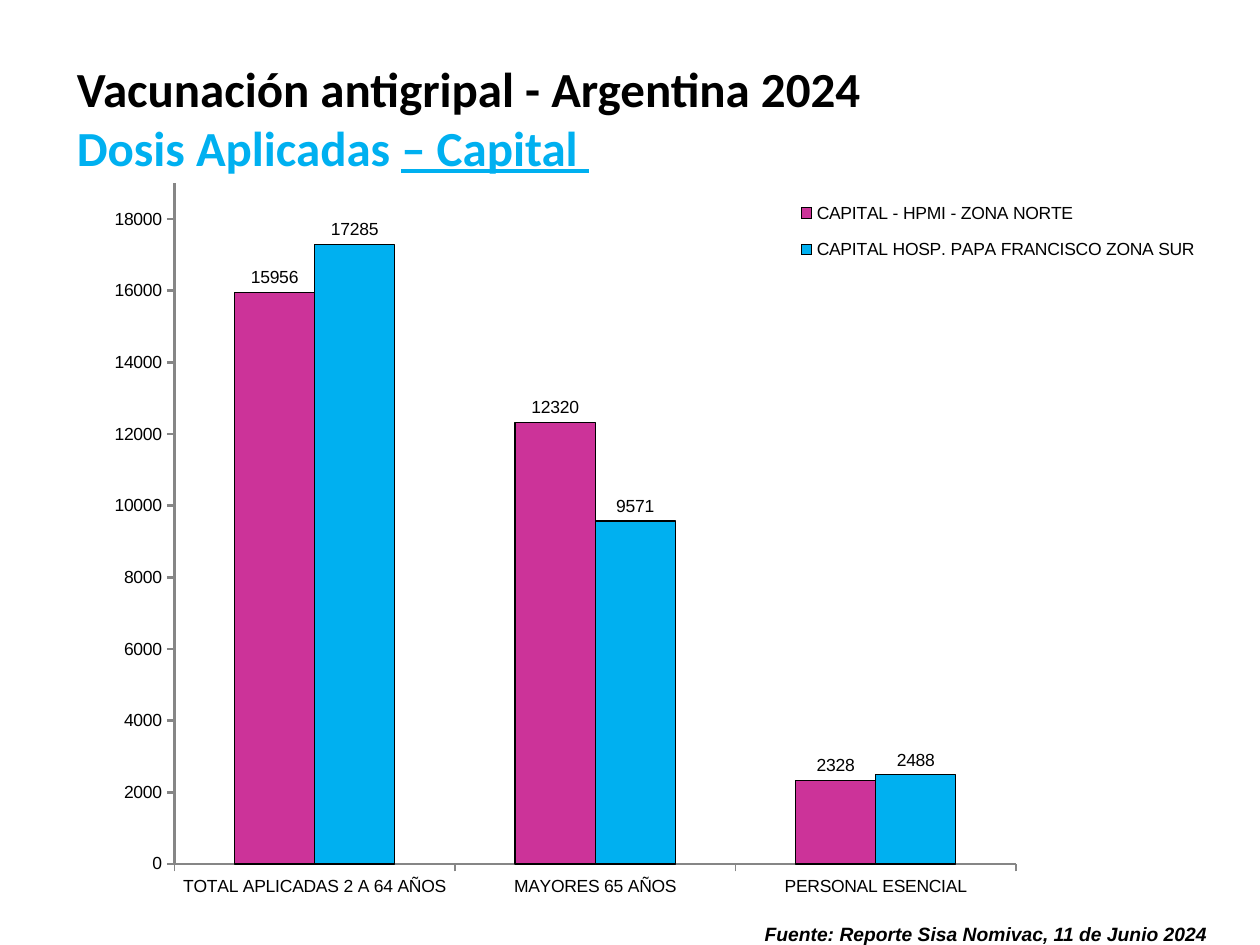
"""Build the slide on flu vaccine doses given in the capital."""
from dataclasses import dataclass

from lxml import etree
from pptx import Presentation
from pptx import util as u
from pptx.chart import data as cd
from pptx.dml.color import RGBColor
from pptx.enum import chart as ce
from pptx.enum import text
from pptx.oxml import ns

BLACK = RGBColor(0, 0, 0)
SKY = RGBColor(0x00, 0xB0, 0xF0)
PINK = RGBColor(0xCC, 0x33, 0x99)
GREY = RGBColor(0x86, 0x86, 0x86)


@dataclass
class Run:
    words: str
    color: RGBColor
    form: dict


@dataclass
class Box:
    at: tuple[float, ...]
    lines: list[list[Run]]
    frame: dict


@dataclass
class Group:
    name: str
    color: RGBColor
    doses: tuple[int, ...]


HEAD = {"name": "Calibri", "size": u.Pt(28), "bold": True}
NOTE = {"name": "Arial", "size": u.Pt(11), "bold": True, "italic": True}
BOXES = [
    Box((0.5, 0.4, 9, 1.06),
        [[Run("Vacunación antigripal - Argentina 2024", BLACK, HEAD)],
         [Run("Dosis Aplicadas ", SKY, HEAD),
          Run("– Capital ", SKY, HEAD | {"underline": True})]],
        {"vertical_anchor": text.MSO_ANCHOR.MIDDLE,
         "margin_left": u.Inches(0.11), "margin_right": u.Inches(0.11)}),
    Box((5.97, 7.27, 3.96, 0.27),
        [[Run("Fuente: Reporte Sisa Nomivac, 11 de Junio 2024", BLACK, NOTE)]],
        {}),
]
CATS = ["TOTAL APLICADAS 2 A 64 AÑOS", "MAYORES 65 AÑOS", "PERSONAL ESENCIAL"]
GROUPS = [
    Group("CAPITAL - HPMI - ZONA NORTE", PINK, (15956, 12320, 2328)),
    Group("CAPITAL HOSP. PAPA FRANCISCO ZONA SUR", SKY, (17285, 9571, 2488)),
]


def apply(item, form: dict) -> None:
    """Set each format value on the item."""
    for key, val in form.items():
        setattr(item, key, val)


def add_box(slide, box: Box) -> None:
    """Draw a text box with its lines of runs."""
    frame = slide.shapes.add_textbox(*map(u.Inches, box.at)).text_frame
    apply(frame, {"word_wrap": True} | box.frame)
    for i, line in enumerate(box.lines):
        para = frame.add_paragraph() if i else frame.paragraphs[0]
        for part in line:
            run = para.add_run()
            run.text = part.words
            apply(run.font, part.form)
            run.font.color.rgb = part.color


def make_layout(inner: bool, *place: float):
    """Return a manual layout as fractions of the chart."""
    root = etree.Element(ns.qn("c:layout"))
    man = etree.SubElement(root, ns.qn("c:manualLayout"))
    pairs = [("layoutTarget", "inner")] if inner else []
    pairs += [("xMode", "edge"), ("yMode", "edge"), *zip("xywh", map(str, place))]
    for tag, val in pairs:
        etree.SubElement(man, ns.qn(f"c:{tag}")).set("val", val)
    return root


def drop_layout(root) -> None:
    """Remove any automatic layout."""
    for old in root.findall(ns.qn("c:layout")):
        root.remove(old)


def style_axis(axis, width: float, form: dict) -> None:
    """Set the ticks, line and scale of an axis."""
    apply(axis, {"has_major_gridlines": False,
                 "major_tick_mark": ce.XL_TICK_MARK.OUTSIDE,
                 "minor_tick_mark": ce.XL_TICK_MARK.NONE} | form)
    axis.format.line.color.rgb = GREY
    axis.format.line.width = u.Pt(width)


def style_group(bars, group: Group) -> None:
    """Colour the bars of a group and label them."""
    bars.format.fill.solid()
    bars.format.fill.fore_color.rgb = group.color
    bars.format.line.color.rgb = BLACK
    bars.format.line.width = u.Pt(0.75)
    apply(bars.data_labels, {"show_value": True, "number_format": "0",
                             "number_format_is_linked": False,
                             "position": ce.XL_LABEL_POSITION.OUTSIDE_END})


def add_doses(slide) -> None:
    """Draw the column chart of doses."""
    data = cd.CategoryChartData()
    data.categories = CATS
    for group in GROUPS:
        data.add_series(group.name, group.doses)
    place = map(u.Inches, (0.36, 1.3, 9.57, 5.97))
    chart = slide.shapes.add_chart(
        ce.XL_CHART_TYPE.COLUMN_CLUSTERED, *place, data).chart
    apply(chart, {"has_title": False, "has_legend": True})
    apply(chart.font, {"name": "Arial", "size": u.Pt(10)})
    chart.font.color.rgb = BLACK
    apply(chart.legend, {"position": ce.XL_LEGEND_POSITION.RIGHT,
                         "include_in_layout": False})
    style_axis(chart.category_axis, 0.75, {})
    style_axis(chart.value_axis, 1.5, {
        "minimum_scale": 0, "maximum_scale": 19000, "major_unit": 2000})
    apply(chart.value_axis.tick_labels, {
        "number_format": "0", "number_format_is_linked": False})
    plot = chart.plots[0]
    apply(plot, {"gap_width": 150, "overlap": 0, "vary_by_categories": False})
    for bars, group in zip(plot.series, GROUPS):
        style_group(bars, group)
    area = chart.element.find(".//" + ns.qn("c:plotArea"))
    drop_layout(area)
    area.insert(0, make_layout(True, 0.107, 0.026, 0.698, 0.905))
    key = chart.element.find(".//" + ns.qn("c:legend"))
    drop_layout(key)
    key.find(ns.qn("c:legendPos")).addnext(
        make_layout(False, 0.62, 0.03, 0.34, 0.12))


def main() -> None:
    """Build and save the slide."""
    deck = Presentation()
    apply(deck, {"slide_width": u.Inches(10), "slide_height": u.Inches(7.5)})
    slide = deck.slides.add_slide(deck.slide_layouts[6])
    for box in BOXES:
        add_box(slide, box)
    add_doses(slide)
    deck.save("out.pptx")


if __name__ == "__main__":
    main()
